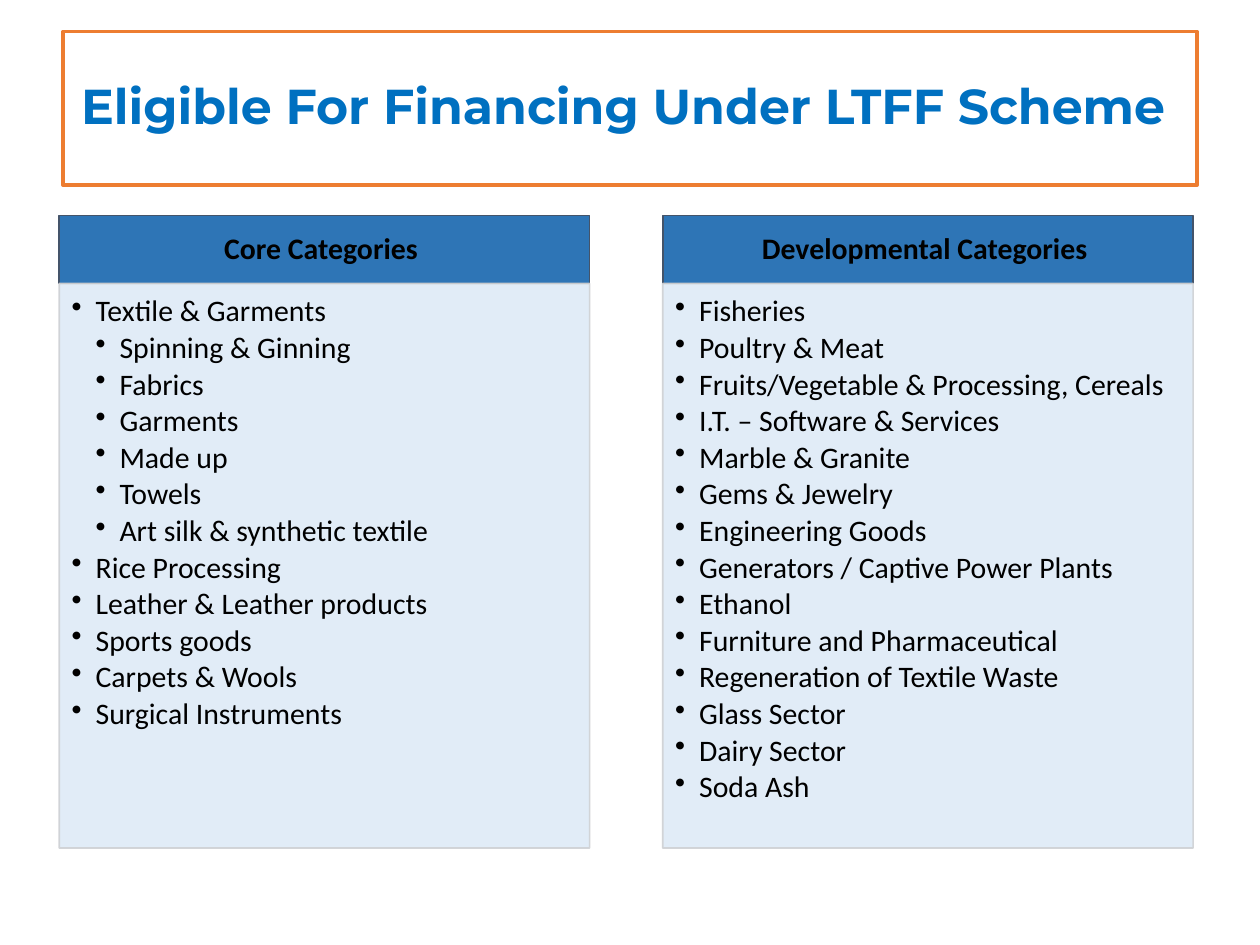
from lxml import etree
from pptx import Presentation
from pptx.dml.color import RGBColor
from pptx.enum.shapes import MSO_SHAPE
from pptx.enum.text import MSO_ANCHOR, PP_ALIGN
from pptx.oxml.ns import qn
from pptx.util import Inches, Pt

RECT = MSO_SHAPE.RECTANGLE
TOP, MID = MSO_ANCHOR.TOP, MSO_ANCHOR.MIDDLE
LEFT, MID_X = PP_ALIGN.LEFT, PP_ALIGN.CENTER

# Content: each item is (level, text)
TITLE = "Eligible For Financing Under LTFF Scheme "
LISTS = [
    ("Core Categories ", [
        (1, "Textile & Garments"),
        (2, "Spinning & Ginning"),
        (2, "Fabrics"),
        (2, "Garments"),
        (2, "Made up"),
        (2, "Towels"),
        (2, "Art silk & synthetic textile"),
        (1, "Rice Processing"),
        (1, "Leather & Leather products"),
        (1, "Sports goods"),
        (1, "Carpets & Wools"),
        (1, "Surgical Instruments"),
    ]),
    ("Developmental Categories ", [
        (1, "Fisheries"),
        (1, "Poultry & Meat"),
        (1, "Fruits/Vegetable & Processing, Cereals"),
        (1, "I.T. – Software & Services"),
        (1, "Marble & Granite"),
        (1, "Gems & Jewelry"),
        (1, "Engineering Goods"),
        (1, "Generators / Captive Power Plants"),
        (1, "Ethanol"),
        (1, "Furniture and Pharmaceutical"),
        (1, "Regeneration of Textile Waste"),
        (1, "Glass Sector"),
        (1, "Dairy Sector"),
        (1, "Soda Ash"),
    ]),
]

# Format
COLORS = {
    "title": "0070C0", "frame": "ED7D31", "text": "000000",
    "head": "2E75B6", "edge": "44546A", "body": "DEEBF7", "rim": "CFD1D4",
}
TITLE_FONT = {"name": "Montserrat", "size": Pt(28), "bold": True}
HEAD_FONT = {"name": "Calibri", "size": Pt(17), "bold": True}
BODY_FONT = {"name": "Calibri", "size": Pt(17), "bold": False}
SIDES = ("margin_left", "margin_top", "margin_right", "margin_bottom")
INDENT = 0.19

# Layout, in inches
X, Y, WIDTH, STEP = 0.47, 1.71, 4.21, 4.79
HEAD_H, BODY_H = 0.54, 4.48


def color(name):
    return RGBColor.from_string(COLORS[name])


def add_box(slide, at, fill, line, width, anchor, pads, alpha=None):
    box = slide.shapes.add_shape(RECT, *map(Inches, at))
    box.shadow.inherit = False
    if fill:
        box.fill.solid()
        box.fill.fore_color.rgb = color(fill)
    else:
        box.fill.background()
    box.line.color.rgb = color(line)
    box.line.width = Pt(width)
    if alpha:
        for tint in box._element.spPr.iter(qn("a:srgbClr")):
            etree.SubElement(tint, qn("a:alpha"), val=str(alpha * 1000))
    frame = box.text_frame
    frame.word_wrap = True
    frame.vertical_anchor = anchor
    for side, pad in zip(SIDES, pads):
        setattr(frame, side, Inches(pad))
    return frame


def add_text(para, text, font, tint, align, after=0):
    para.alignment = align
    para.line_spacing = 0.9
    run = para.add_run()
    run.text = text
    for key, value in font.items():
        setattr(run.font, key, value)
    run.font.color.rgb = color(tint)
    if after:
        gap = etree.SubElement(para._p.get_or_add_pPr(), qn("a:spcAft"))
        etree.SubElement(gap, qn("a:spcPct"), val=str(after * 1000))


def add_bullet(para, level):
    para.level = level
    props = para._p.get_or_add_pPr()
    props.set("marL", str(Inches(INDENT * level)))
    props.set("indent", str(-Inches(INDENT)))
    etree.SubElement(props, qn("a:buChar"), char="•")


def main():
    prs = Presentation()
    prs.slide_width, prs.slide_height = Inches(10), Inches(7.5)
    slide = prs.slides.add_slide(prs.slide_layouts[6])

    # Title
    frame = add_box(slide, (0.5, 0.25, 9, 1.22), None, "frame", 2, MID,
                    (0.1, 0.05, 0.1, 0.05))
    add_text(frame.paragraphs[0], TITLE, TITLE_FONT, "title", MID_X)

    # One column per list: heading above bullets
    for col, (head, items) in enumerate(LISTS):
        left = X + col * STEP
        frame = add_box(slide, (left, Y, WIDTH, HEAD_H), "head", "edge", 1,
                        MID, (0.13, 0.08, 0.13, 0.08))
        add_text(frame.paragraphs[0], head, HEAD_FONT, "text", MID_X, 35)

        frame = add_box(slide, (left, Y + HEAD_H, WIDTH, BODY_H), "body",
                        "rim", 1, TOP, (0.1, 0.1, 0.13, 0.15), 90)
        for row, (level, text) in enumerate(items):
            para = frame.add_paragraph() if row else frame.paragraphs[0]
            add_text(para, text, BODY_FONT, "text", LEFT, 15)
            add_bullet(para, level)

    prs.save("out.pptx")


if __name__ == "__main__":
    main()
